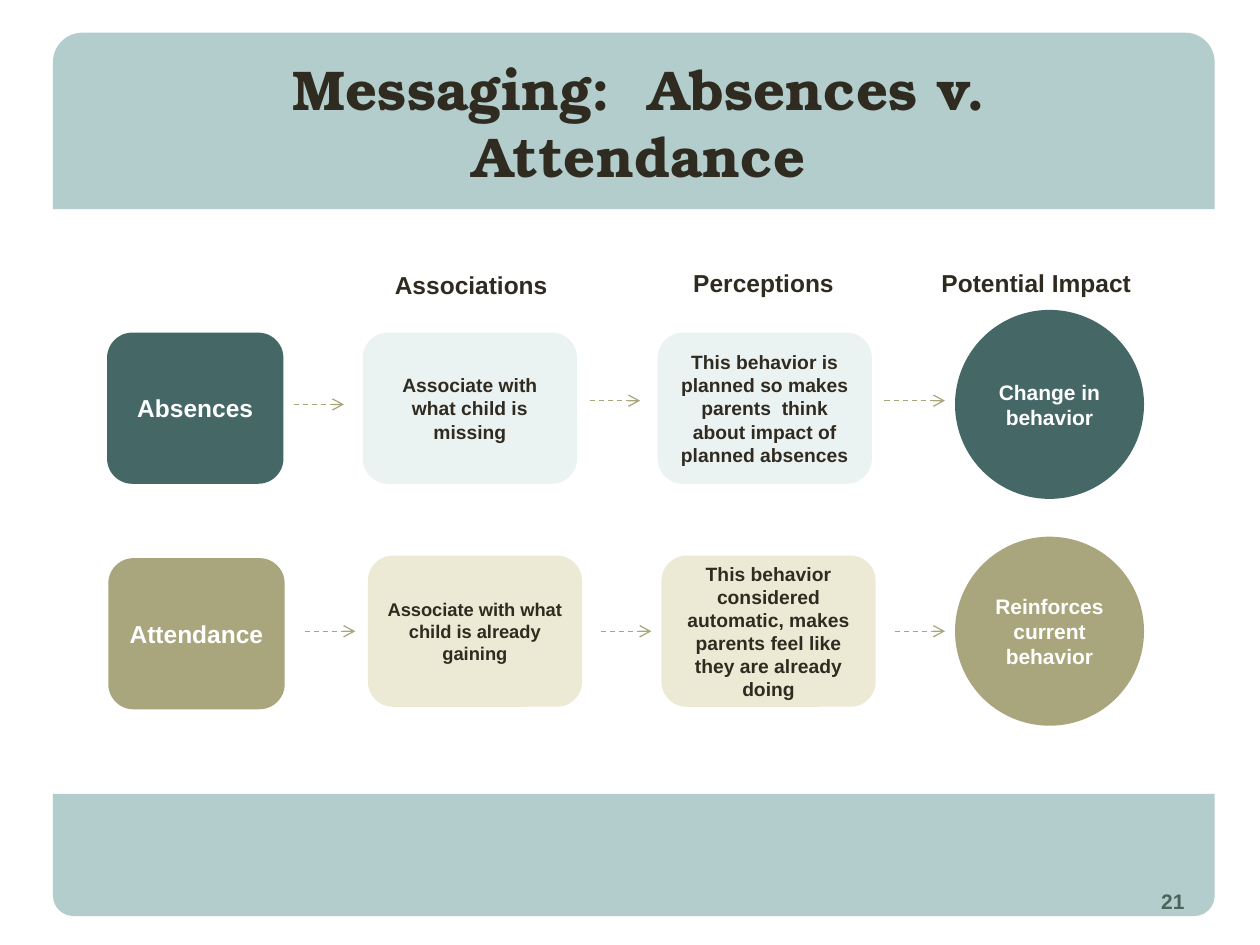
from lxml import etree
from pptx import Presentation
from pptx.dml.color import RGBColor
from pptx.enum import dml, shapes, text
from pptx.oxml import ns
from pptx.util import Pt

INK, WHITE, TEAL, OLIVE, BAND = "2F2B20", "FFFFFF", "456867", "A9A57C", "689C9A"
PALE_TEAL, PALE_OLIVE = "EBF2F2", "ECEAD4"
SHAPE = shapes.MSO_SHAPE


def color(value):
    return RGBColor.from_string(value)


class SlideBuilder:
    """Hold the style and the current slide, and add each kind of element."""

    body_font = "Arial"
    title_font = "TeX Gyre Bonum"

    def __init__(self, slide):
        self.slide = slide

    def add_text(self, shape, words, size, ink=INK, font=body_font,
                 align=text.PP_ALIGN.CENTER, anchor=text.MSO_ANCHOR.TOP, wrap=True):
        frame = shape.text_frame
        frame.word_wrap = wrap
        frame.auto_size = text.MSO_AUTO_SIZE.NONE
        frame.vertical_anchor = anchor
        paragraph = frame.paragraphs[0]
        paragraph.alignment = align
        run = paragraph.add_run()
        run.text = words
        run.font.name = font
        run.font.size = Pt(size)
        run.font.bold = True
        run.font.color.rgb = color(ink)

    def shape(self, preset, box, fill):
        shape = self.slide.shapes.add_shape(preset, *map(Pt, box))
        shape.shadow.inherit = False
        shape.fill.solid()
        shape.fill.fore_color.rgb = color(fill)
        shape.line.fill.background()
        return shape

    def band(self, box, rotation=0):
        band = self.shape(SHAPE.ROUND_2_SAME_RECTANGLE, box, BAND)
        band.rotation = rotation
        fill_color = band.element.spPr.find(".//" + ns.qn("a:srgbClr"))
        etree.SubElement(fill_color, ns.qn("a:alpha"), val="50000")

    def title(self, words, box):
        title = self.slide.shapes.title
        title.left, title.top, title.width, title.height = map(Pt, box)
        self.add_text(title, words, 32, font=self.title_font)
        title.element.getparent().append(title.element)

    def label(self, words, box, size, **style):
        label = self.slide.shapes.add_textbox(*map(Pt, box))
        self.add_text(label, words, size, **style)

    def node(self, preset, words, box, fill, size, ink):
        node = self.shape(preset, box, fill)
        frame = node.text_frame
        frame.margin_left = frame.margin_right = Pt(5.76)
        frame.margin_top = frame.margin_bottom = 0
        self.add_text(node, words, size, ink, anchor=text.MSO_ANCHOR.MIDDLE)

    def arrow(self, start, end, y):
        arrow = self.slide.shapes.add_connector(
            shapes.MSO_CONNECTOR.STRAIGHT, Pt(start), Pt(y), Pt(end), Pt(y))
        arrow.line.color.rgb = color(OLIVE)
        arrow.line.width = Pt(0.75)
        arrow.line.dash_style = dml.MSO_LINE.DASH
        properties = arrow.element.spPr
        etree.SubElement(properties.find(ns.qn("a:ln")), ns.qn("a:tailEnd"), type="arrow")
        etree.SubElement(properties, ns.qn("a:effectLst"))


def main():
    presentation = Presentation()
    presentation.slide_width, presentation.slide_height = Pt(720), Pt(540)
    builder = SlideBuilder(presentation.slides.add_slide(presentation.slide_layouts[5]))

    builder.label("21", (516.24, 500.4, 167.76, 28.8), 12,
                  align=text.PP_ALIGN.RIGHT, anchor=text.MSO_ANCHOR.MIDDLE)
    builder.band((30.24, 18.72, 663.84, 100.8))
    builder.title("Messaging:  Absences v. Attendance", (137.52, 27.36, 455.76, 84.96))
    builder.band((30.24, 453.6, 663.84, 69.84), rotation=180)

    for words, left, top, width in (("Associations", 218.16, 150.48, 102.24),
                                    ("Perceptions", 388.8, 149.76, 95.04),
                                    ("Potential Impact", 530.64, 149.76, 123.12)):
        builder.label(words, (left, top, width, 24.48), 14, wrap=False)

    rows = (
        (TEAL, PALE_TEAL, 177.12,
         ("Absences", 61.2, 190.08),
         (("Associate with what child is missing", 207.36, 11),
          ("This behavior is planned so makes parents  think about impact of "
           "planned absences", 375.84, 11)),
         190.08, "Change in behavior",
         ((167.76, 196.56, 231.12), (336.96, 365.76, 228.96), (505.44, 540, 228.96))),
        (OLIVE, PALE_OLIVE, 306.72,
         ("Attendance", 61.92, 318.96),
         (("Associate with what child is already gaining", 210.24, 10.5),
          ("This behavior considered automatic, makes parents feel like they "
           "are already doing", 378, 11)),
         317.52, "Reinforces current behavior",
         ((174.24, 203.04, 360.72), (343.44, 372.24, 360.72), (511.2, 540, 360.72))),
    )
    for dark, pale, circle_top, topic, steps, step_top, impact, arrows in rows:
        words, left, top = topic
        builder.node(SHAPE.ROUNDED_RECTANGLE, words, (left, top, 100.8, 86.4),
                     dark, 14, WHITE)
        for words, left, size in steps:
            builder.node(SHAPE.ROUNDED_RECTANGLE, words, (left, step_top, 122.4, 86.4),
                         pale, size, INK)
        builder.node(SHAPE.OVAL, impact, (545.76, circle_top, 108, 108), dark, 12, WHITE)
        for start, end, y in arrows:
            builder.arrow(start, end, y)

    presentation.save("out.pptx")


if __name__ == "__main__":
    main()
